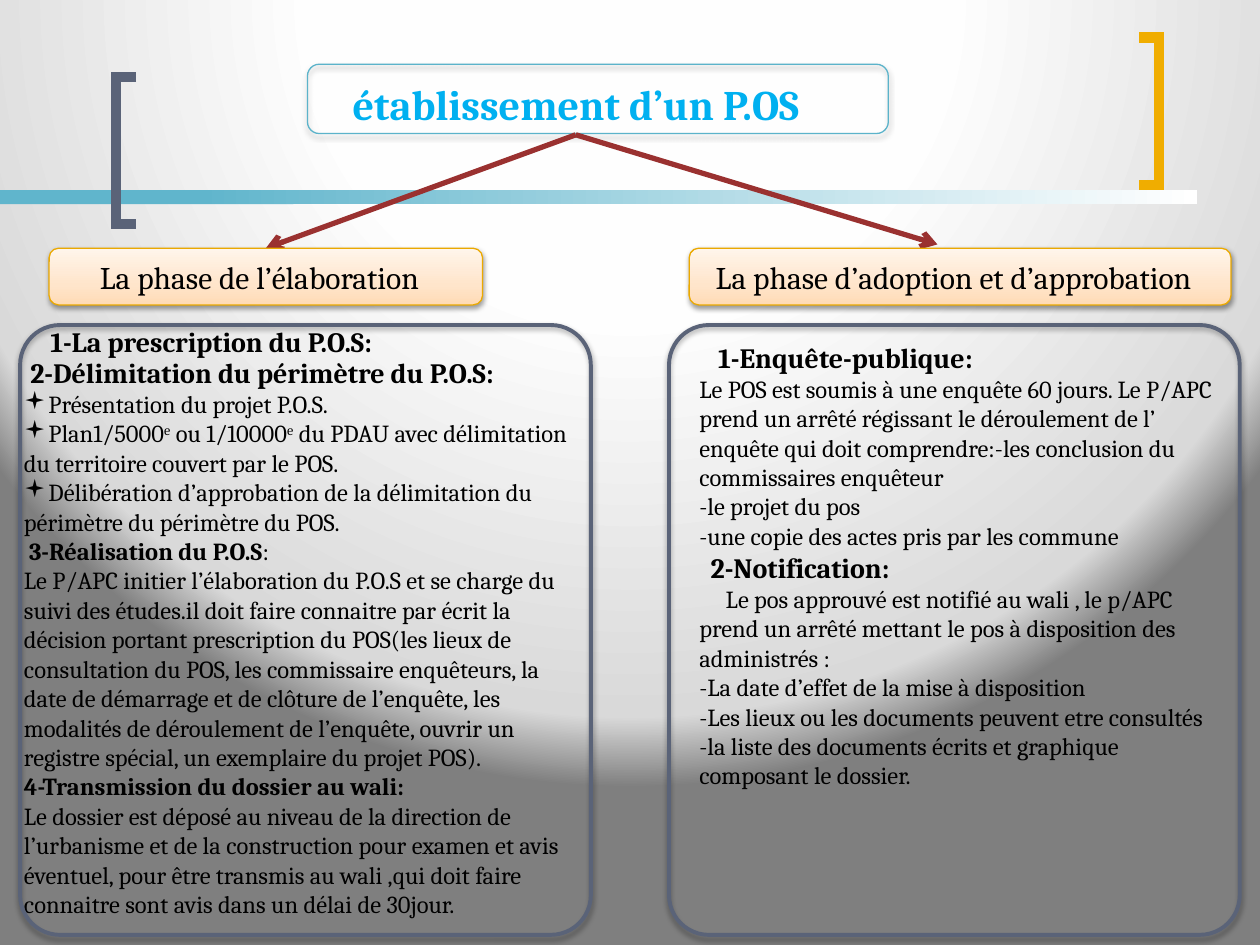
from dataclasses import dataclass

from lxml.etree import SubElement
from pptx import Presentation
from pptx.dml.color import RGBColor
from pptx.enum.shapes import MSO_CONNECTOR, MSO_SHAPE
from pptx.enum.text import MSO_ANCHOR, MSO_AUTO_SIZE, PP_ALIGN
from pptx.oxml.ns import qn
from pptx.util import Inches, Pt


@dataclass(frozen=True)
class Theme:
    """Colours, font and type sizes of the slide."""
    font: str = "Cambria"
    ink: str = "000000"
    title: str = "00B0F0"
    title_edge: str = "5BB3CA"
    bar: str = "60B5CC"
    slate: str = "5A6378"
    gold: str = "F0AD00"
    label_edge: str = "EBA900"
    arrow: str = "9A3130"
    label_fill: tuple = ((0, "FFDBB5"), (35, "FFE5CB"), (100, "FFF5EB"))
    bar_fade: tuple = ((0, "60B5CC"), (100, "FFFFFF"))
    backdrop: tuple = ((40, "FEFEFE"), (91, "D9D9D9"), (100, "7F7F7F"))
    title_size: int = 24
    label_size: int = 18
    heading_size: int = 16
    body_size: int = 14


@dataclass(frozen=True)
class Area:
    """A rectangle in inches."""
    left: float
    top: float
    width: float
    height: float

    def lengths(self) -> tuple:
        return tuple(map(Inches, (self.left, self.top, self.width, self.height)))


@dataclass(frozen=True)
class Span:
    """A stretch of text; raised marks superscript."""
    text: str
    bold: bool = False
    raised: bool = False


@dataclass(frozen=True)
class Line:
    """A paragraph of a phase."""
    spans: tuple
    size: int = 14
    indent: float = 0
    bullet: bool = False


@dataclass(frozen=True)
class Phase:
    """One column: its label, frame and list."""
    label: str
    label_area: Area
    frame_area: Area
    body_area: Area
    lines: tuple


THEME = Theme()


def plain(text: str, indent: float = 0, bullet: bool = False) -> Line:
    """Describe a body paragraph."""
    return Line((Span(text),), THEME.body_size, indent, bullet)


def heading(text: str, indent: float = 0, size: int = THEME.heading_size) -> Line:
    """Describe a bold paragraph."""
    return Line((Span(text, True),), size, indent)


PHASES = (
    Phase("La phase de l’élaboration", Area(0.39, 1.97, 3.44, 0.45),
          Area(0.16, 2.58, 4.53, 4.84), Area(0.09, 2.77, 4.64, 4.6), (
        heading("2-Délimitation du périmètre du P.O.S:", 0.05),
        plain("Présentation du projet P.O.S.", bullet=True),
        Line((Span("Plan1/5000"), Span("e", raised=True), Span(" ou 1/10000"),
              Span("e", raised=True),
              Span(" du PDAU avec délimitation du territoire couvert par le POS.")), bullet=True),
        plain("Délibération d’approbation de la délimitation du périmètre du périmètre du POS.",
              bullet=True),
        Line((Span("3-Réalisation du P.O.S", True), Span(":")), indent=0.04),
        plain("Le P/APC initier l’élaboration du P.O.S et se charge du suivi des études.il doit "
              "faire connaitre par écrit la décision portant prescription du POS(les lieux de "
              "consultation du POS, les commissaire enquêteurs, la date de démarrage et de clôture "
              "de l’enquête, les modalités de déroulement de l’enquête, ouvrir un registre spécial, "
              "un exemplaire du projet POS)."),
        heading("4-Transmission du dossier au wali:", size=THEME.body_size),
        plain("Le dossier est déposé au niveau de la direction de l’urbanisme et de la construction "
              "pour examen et avis éventuel, pour être transmis au wali ,qui doit faire connaitre "
              "sont avis dans un délai de 30jour."))),
    Phase("La phase d’adoption et d’approbation", Area(5.47, 1.97, 4.3, 0.45),
          Area(5.31, 2.58, 4.53, 4.84), Area(5.45, 2.65, 4.33, 4), (
        heading("1-Enquête-publique:", 0.15),
        plain("Le POS est soumis à une enquête 60 jours. Le P/APC prend un arrêté régissant le "
              "déroulement de l’ enquête qui doit comprendre:-les conclusion du commissaires "
              "enquêteur"),
        plain("-le projet du pos"),
        plain("-une copie des actes pris par les commune"),
        heading("2-Notification:", 0.09),
        plain("Le pos approuvé est notifié au wali , le p/APC prend un arrêté mettant le pos à "
              "disposition des administrés :", 0.21),
        plain("-La date d’effet de la mise à disposition"),
        plain("-Les lieux ou les documents peuvent etre consultés"),
        plain("-la liste des documents écrits et graphique composant le dossier."))),
)


def add_colour(parent, colour: str):
    """Append an RGB colour element."""
    return SubElement(parent, qn("a:srgbClr"), val=colour)


def paint_gradient(fill, holder, stops: tuple, angle: int | None = None) -> None:
    """Fill with stops along an angle, or around a circle without one."""
    fill.gradient()
    gradient = holder.find(qn("a:gradFill"))
    for child in list(gradient):
        gradient.remove(child)
    stop_list = SubElement(gradient, qn("a:gsLst"))
    for position, colour in stops:
        add_colour(SubElement(stop_list, qn("a:gs"), pos=str(position * 1000)), colour)
    if angle is not None:
        SubElement(gradient, qn("a:lin"), ang=str(angle * 60000), scaled="0")
    else:
        circle = SubElement(gradient, qn("a:path"), path="circle")
        SubElement(circle, qn("a:fillToRect"), l="50000", t="-80000", r="50000", b="180000")


def set_line(shape, colour: str, width: float) -> None:
    """Give a shape or connector its line."""
    shape.line.color.rgb = RGBColor.from_string(colour)
    shape.line.width = Pt(width)


def add_shadow(shape, alpha: int, distance: float) -> None:
    """Drop a soft black shadow straight down."""
    effects = shape._element.spPr.find(qn("a:effectLst"))
    shadow = SubElement(effects, qn("a:outerShdw"), blurRad=str(Pt(3.1)), dist=str(Pt(distance)),
                        dir="5400000", rotWithShape="0")
    SubElement(add_colour(shadow, THEME.ink), qn("a:alpha"), val=str(alpha * 1000))


def add_box(page, area: Area, kind=MSO_SHAPE.ROUNDED_RECTANGLE):
    """Add an unfilled, unlined shape."""
    box = page.shapes.add_shape(kind, *area.lengths())
    box.shadow.inherit = False
    box.fill.background()
    box.line.fill.background()
    return box


def add_frame(page, area: Area, colour: str, width: float, rounding: float = 0.17) -> None:
    """Add a rounded outline with a shadow."""
    frame = add_box(page, area)
    frame.adjustments[0] = rounding
    set_line(frame, colour, width)
    add_shadow(frame, 35, 1.8)


def add_bracket(page, spine: float, tip: float, top: float, colour: str) -> None:
    """Draw a square bracket from its spine and tip positions."""
    bottom = top + 1.17
    points = [(Inches(x), Inches(y)) for x, y in ((spine, top), (spine, bottom), (tip, bottom))]
    builder = page.shapes.build_freeform(Inches(tip), Inches(top))
    builder.add_line_segments(points, close=False)
    bracket = builder.convert_to_shape()
    bracket.shadow.inherit = False
    bracket.fill.background()
    set_line(bracket, colour, 6)
    SubElement(bracket.line._get_or_add_ln(), qn("a:miter"), lim="800000")


def add_arrow(page, title, end: tuple):
    """Draw an arrow from the title down to a phase."""
    arrow = page.shapes.add_connector(MSO_CONNECTOR.STRAIGHT, 0, 0, *map(Inches, end))
    arrow.begin_connect(title, 2)
    set_line(arrow, THEME.arrow, 3)
    SubElement(arrow.line._get_or_add_ln(), qn("a:tailEnd"), type="arrow")
    SubElement(arrow._element.spPr, qn("a:effectLst"))
    return arrow


def style_font(font, size: int, colour: str = THEME.ink, bold: bool = False) -> None:
    """Apply the theme font."""
    font.name, font.size, font.bold = THEME.font, Pt(size), bold
    font.color.rgb = RGBColor.from_string(colour)


def write_text(box, text: str, size: int, align=PP_ALIGN.CENTER, **font) -> None:
    """Write one line, centred vertically."""
    frame = box.text_frame
    frame.text = text
    frame.word_wrap = True
    frame.auto_size = MSO_AUTO_SIZE.NONE
    frame.vertical_anchor = MSO_ANCHOR.MIDDLE
    frame.paragraphs[0].alignment = align
    style_font(frame.paragraphs[0].runs[0].font, size, **font)


def place(box, area: Area) -> None:
    """Move a placeholder to an area."""
    box.left, box.top, box.width, box.height = area.lengths()


def fill_body(box, phase: Phase) -> None:
    """Write the paragraphs of a phase into its placeholder."""
    place(box, phase.body_area)
    frame = box.text_frame
    frame.auto_size = MSO_AUTO_SIZE.NONE
    for index, line in enumerate(phase.lines):
        para = frame.paragraphs[0] if index == 0 else frame.add_paragraph()
        para.space_before = Pt(0)
        properties = para._p.get_or_add_pPr()
        properties.set("marL", "0")
        properties.set("indent", str(Inches(line.indent)))
        if line.bullet:
            SubElement(properties, qn("a:buFont"), typeface="Wingdings")
            SubElement(properties, qn("a:buChar"), char="▪")
        else:
            SubElement(properties, qn("a:buNone"))
        for span in line.spans:
            run = para.add_run()
            run.text = span.text
            style_font(run.font, line.size, bold=span.bold)
            if span.raised:
                run.font._element.set("baseline", "30000")


def main() -> None:
    """Build and save the slide."""
    deck = Presentation()
    deck.slide_width, deck.slide_height = Inches(10), Inches(7.5)
    page = deck.slides.add_slide(deck.slide_layouts[3])
    backdrop = page.background.fill
    backdrop.solid()
    paint_gradient(backdrop, page._element.find(".//" + qn("p:bgPr")), THEME.backdrop)

    bar = add_box(page, Area(0, 1.51, 2.33, 0.11), MSO_SHAPE.RECTANGLE)
    bar.fill.solid()
    bar.fill.fore_color.rgb = RGBColor.from_string(THEME.bar)
    fade = add_box(page, Area(1.58, 1.51, 7.92, 0.11), MSO_SHAPE.RECTANGLE)
    paint_gradient(fade.fill, fade._element.spPr, THEME.bar_fade, 0)
    add_bracket(page, 0.92, 1.08, 0.61, THEME.slate)
    add_bracket(page, 9.2, 9.04, 0.3, THEME.gold)

    title, *bodies = page.placeholders
    place(title, Area(2.59, 0.57, 3.96, 0.5))
    write_text(title, "établissement d’un P.OS", THEME.title_size, colour=THEME.title, bold=True)
    add_frame(page, Area(2.44, 0.51, 4.61, 0.55), THEME.title_edge, 0.75)

    first_step = add_box(page, Area(0, 2.5, 3.2, 0.41))
    first_step.text_frame.margin_left = Inches(0.38)
    first_step.text_frame.margin_right = 0
    write_text(first_step, "1-La prescription du P.O.S:", THEME.heading_size, PP_ALIGN.LEFT, bold=True)

    arrows = [add_arrow(page, title, end) for end in ((2.11, 1.97), (7.44, 1.94))]
    labels = []
    for phase, body in zip(PHASES, bodies):
        label = add_box(page, phase.label_area)
        paint_gradient(label.fill, label._element.spPr, THEME.label_fill, 270)
        set_line(label, THEME.label_edge, 0.75)
        add_shadow(label, 38, 1.6)
        label.text_frame.margin_right = Inches(0.2)
        write_text(label, phase.label, THEME.label_size)
        labels.append(label)
        add_frame(page, phase.frame_area, THEME.slate, 2.25, 0.07)
        fill_body(body, phase)
    arrows[0].end_connect(labels[0], 0)
    deck.save("out.pptx")


if __name__ == "__main__":
    main()
